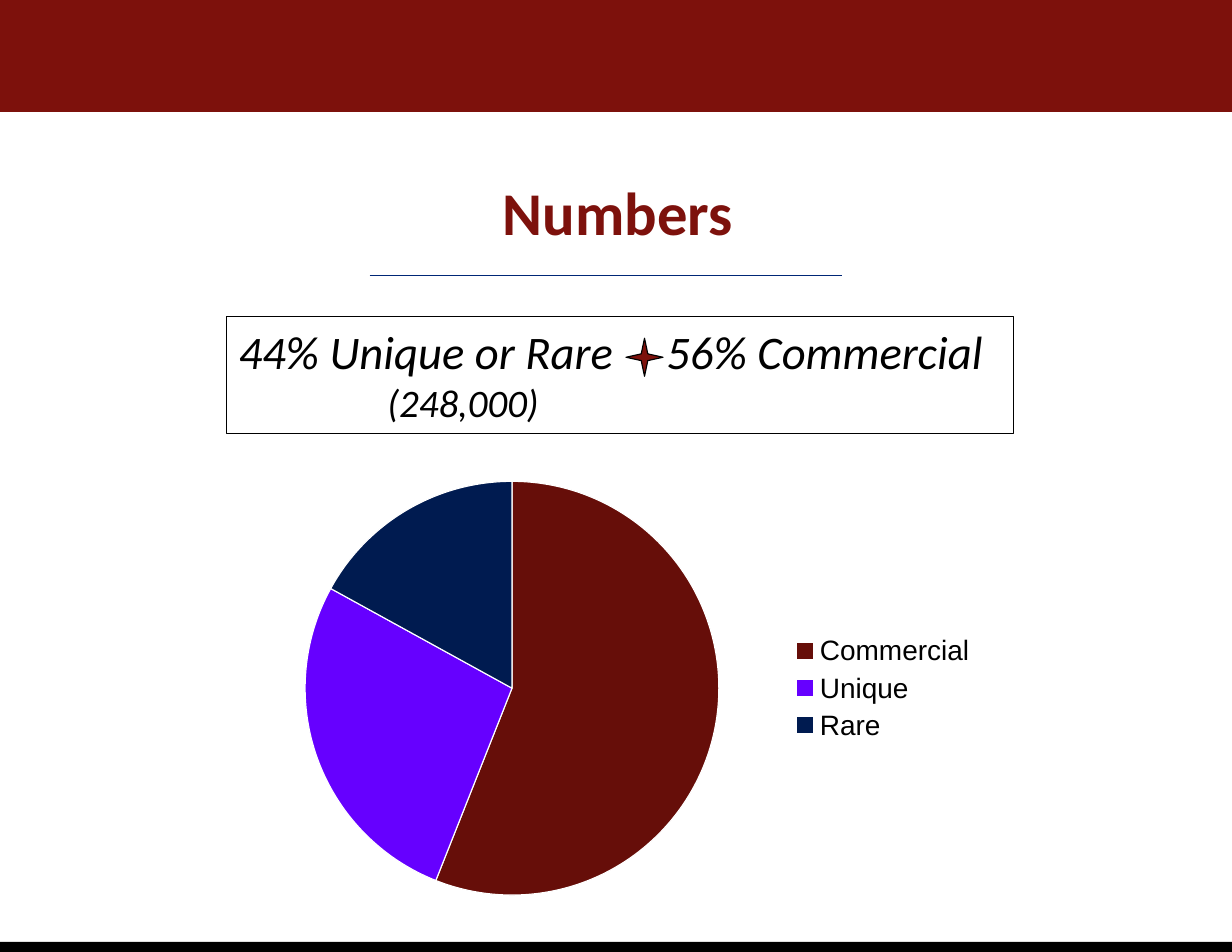
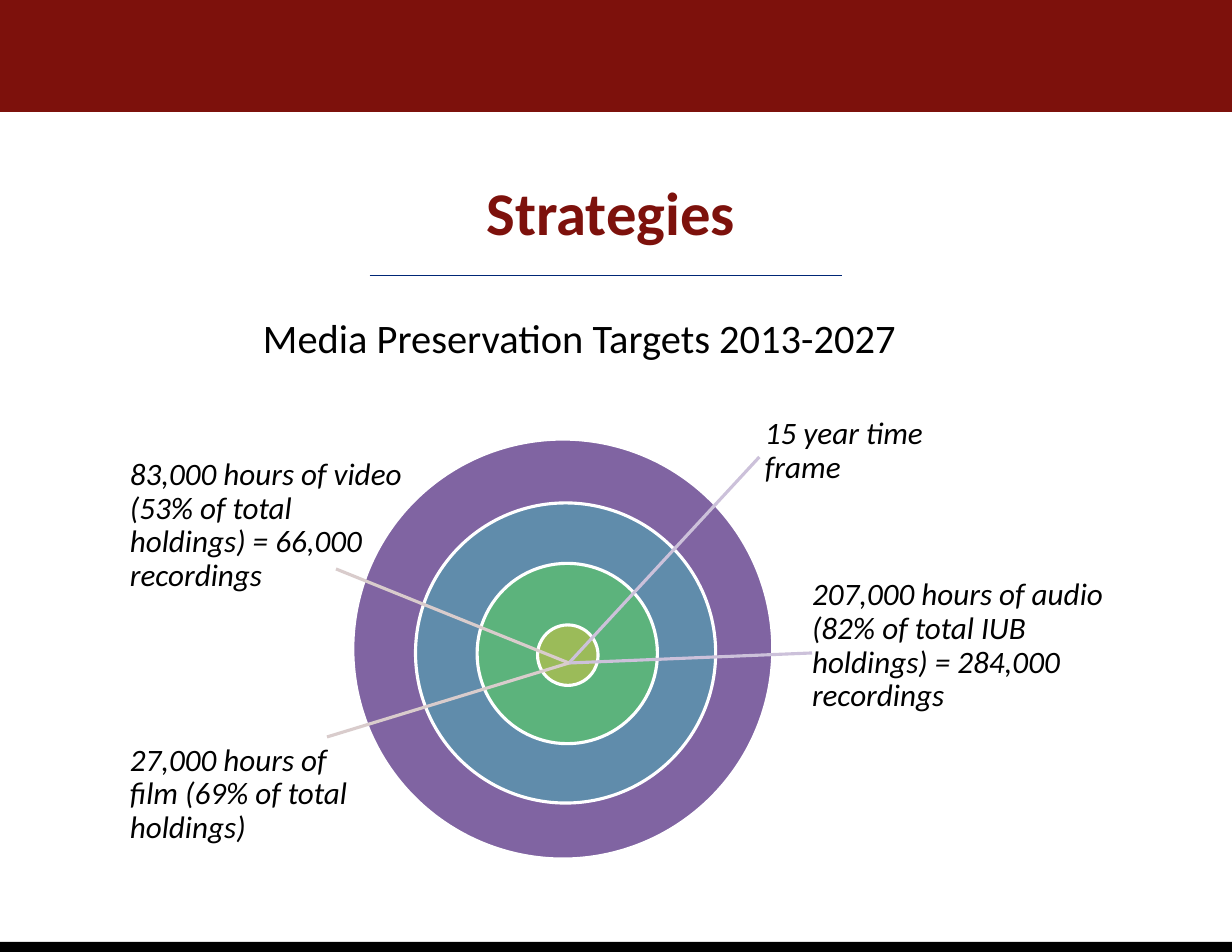
from lxml import etree
from pptx import Presentation
from pptx.chart import data
from pptx.dml.color import RGBColor
from pptx.enum import chart, shapes, text
from pptx.oxml import ns
from pptx.util import Inches, Pt

hue = RGBColor.from_string
RED, BLACK, WHITE, NAVY = "7D110C", "000000", "FFFFFF", "002776"
LILAC, ROSE = "CCC1DA", "D9CCCC"


def draw(page, kind, at, fill=None, edge=None, width=0.75):
    shape = page.shapes.add_shape(kind, *map(Inches, at))
    shape.shadow.inherit = False
    if fill:
        shape.fill.solid()
        shape.fill.fore_color.rgb = hue(fill)
    else:
        shape.fill.background()
    if edge:
        shape.line.color.rgb = hue(edge)
        shape.line.width = Pt(width)
    else:
        shape.line.fill.background()
    return shape


def write(para, words, size, color=BLACK, bold=False, slant=False):
    run = para.add_run()
    run.text = words
    run.font.name = "Calibri"
    run.font.size = Pt(size)
    run.font.color.rgb = hue(color)
    run.font.bold = bold
    run.font.italic = slant


deck = Presentation()
deck.slide_width, deck.slide_height = Inches(11), Inches(8.5)
kinds = shapes.MSO_SHAPE
lines = []
pages = []

for title, left in (("Numbers", 0.64), ("Strategies", 0.58)):
    page = deck.slides.add_slide(deck.slide_layouts[6])
    pages.append(page)
    draw(page, kinds.RECTANGLE, (0, 8.41, 11, 0.09), BLACK)
    draw(page, kinds.RECTANGLE, (0, 0, 11, 1), RED)
    lines.append((page, (3.3, 2.46, 7.52, 2.46), NAVY, 1))
    box = page.shapes.add_textbox(*map(Inches, (left, 1.18, 9.75, 1.42)))
    frame = box.text_frame
    frame.word_wrap = True
    frame.vertical_anchor = text.MSO_ANCHOR.MIDDLE
    para = frame.paragraphs[0]
    para.alignment = text.PP_ALIGN.CENTER
    write(para, title, 39, RED, bold=True)

numbers, plan = pages

table = data.CategoryChartData()
table.categories = ["Commercial", "Unique", "Rare"]
table.add_series("Series 1", (56, 27, 17))
place = map(Inches, (2.11, 4.16, 6.71, 3.97))
pie = numbers.shapes.add_chart(chart.XL_CHART_TYPE.PIE, *place, table).chart
pie.has_title = False
pie.font.name = "Arial"
pie.font.size = Pt(18)
pie.font.color.rgb = hue(BLACK)
pie.has_legend = True
pie.legend.position = chart.XL_LEGEND_POSITION.RIGHT
pie.legend.include_in_layout = False
pie.plots[0].vary_by_categories = True
for i, color in enumerate(("660E09", "6600FF", "001B50")):
    slice = pie.plots[0].series[0].points[i].format
    slice.fill.solid()
    slice.fill.fore_color.rgb = hue(color)
    slice.line.color.rgb = hue(WHITE)
    slice.line.width = Pt(0.75)

panel = draw(numbers, kinds.RECTANGLE, (2.02, 2.83, 7.03, 1.04), edge=BLACK)
frame = panel.text_frame
frame.word_wrap = True
frame.vertical_anchor = text.MSO_ANCHOR.TOP
frame.margin_left = frame.margin_right = Inches(0.11)
share, count = frame.paragraphs[0], frame.add_paragraph()
share.alignment = count.alignment = text.PP_ALIGN.LEFT
tabs = etree.SubElement(share._p.get_or_add_pPr(), ns.qn("a:tabLst"))
etree.SubElement(tabs, ns.qn("a:tab"), pos=str(Inches(3.82)), algn="l")
count._p.get_or_add_pPr().set("marL", str(Inches(1.33)))
write(share, "44% Unique or Rare\t56% Commercial", 30, slant=True)
write(count, "(248,000)", 25, slant=True)
draw(numbers, kinds.STAR_4_POINT, (5.59, 3.02, 0.33, 0.34), RED, BLACK)

rings = (
    (3.15, 3.92, "8064A2"),
    (3.71, 4.49, "608CAB"),
    (4.26, 5.03, "5CB37C"),
    (4.8, 5.58, "9BBB59"),
)
for i, (left, top, color) in enumerate(rings):
    size = 3.75 - 1.07 * i
    draw(plan, kinds.OVAL, (left, top, size, size), color, WHITE, 2)

notes = (
    ((6.67, 3.58, 1.88, 0.9), "15 year time frame"),
    ((7.09, 5.04, 2.95, 1.46),
     "207,000 hours of audio (82% of total IUB holdings) = 284,000 recordings"),
    ((1, 3.92, 2.66, 1.55),
     "83,000 hours of video (53% of total holdings) = 66,000 recordings"),
    ((1, 6.32, 2.43, 1.55), "27,000 hours of film (69% of total holdings)"),
)
for at, words in notes:
    frame = plan.shapes.add_textbox(*map(Inches, at)).text_frame
    frame.word_wrap = True
    frame.vertical_anchor = text.MSO_ANCHOR.MIDDLE
    frame.margin_left = Inches(0.16)
    frame.margin_top = frame.margin_right = frame.margin_bottom = Inches(0.03)
    frame.paragraphs[0].line_spacing = 0.9
    write(frame.paragraphs[0], words, 20, slant=True)

head = plan.shapes.add_textbox(*map(Inches, (2.25, 2.75, 5.9, 0.54)))
head.text_frame.word_wrap = True
write(head.text_frame.paragraphs[0], "Media Preservation Targets 2013-2027", 26)

for x, y, color in (
    (6.78, 4.08, LILAC), (7.25, 5.83, LILAC), (2.92, 6.58, ROSE), (3, 5.08, ROSE),
):
    lines.append((plan, (x, y, 5.08, 5.92), color, 2))

for page, ends, color, width in lines:
    line = page.shapes.add_connector(shapes.MSO_CONNECTOR.STRAIGHT, *map(Inches, ends))
    line.line.color.rgb = hue(color)
    line.line.width = Pt(width)
    etree.SubElement(line._element.spPr, ns.qn("a:effectLst"))

deck.save("out.pptx")
